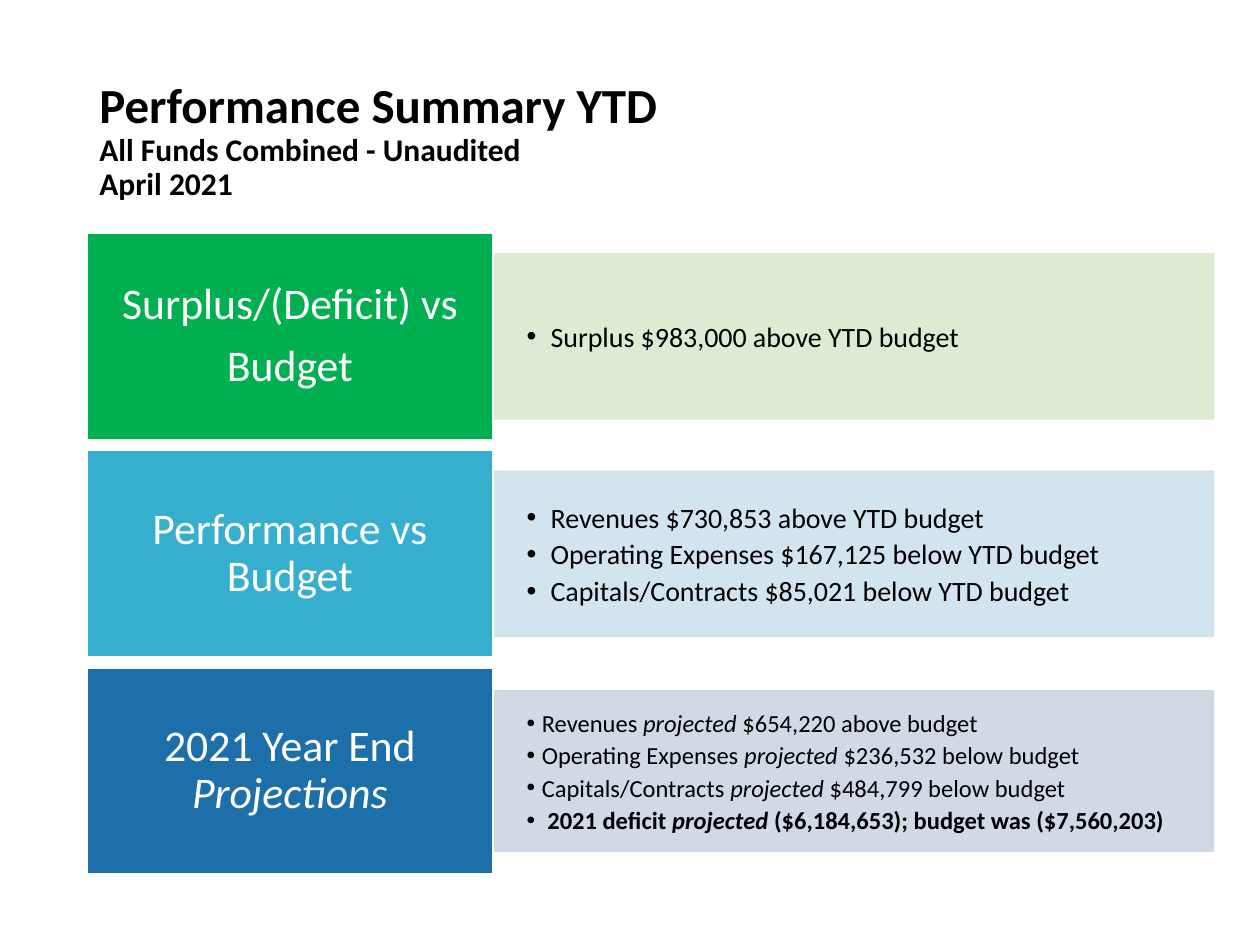
import lxml.etree
import pptx
import pptx.dml.color
import pptx.enum.shapes
import pptx.enum.text
import pptx.oxml.ns
import pptx.util

Inches = pptx.util.Inches
Pt = pptx.util.Pt
qn = pptx.oxml.ns.qn

FONT = "Calibri"
LABEL_LEFT, LABEL_WIDTH, LABEL_HEIGHT = 0.69, 3.22, 1.64
PANEL_WIDTH = 5.72
FIRST_TOP, ROW_PITCH = 1.85, 1.725


def color(value):
    return pptx.dml.color.RGBColor.from_string(value)


def add_span(para, text, size, shade, style=""):
    span = para.add_run()
    span.text = text
    font = span.font
    font.name, font.size = FONT, Pt(size)
    font.bold, font.italic = "b" in style, "i" in style
    font.color.rgb = color(shade)


def prepare_frame(box, horizontal, vertical):
    frame = box.text_frame
    frame.word_wrap = True
    frame.vertical_anchor = pptx.enum.text.MSO_ANCHOR.MIDDLE
    frame.margin_left = frame.margin_right = Inches(horizontal)
    frame.margin_top = frame.margin_bottom = Inches(vertical)
    return frame


def fill_paragraphs(frame, lines, size, shade, spacing, after):
    for index, line in enumerate(lines):
        para = frame.paragraphs[0] if index == 0 else frame.add_paragraph()
        para.line_spacing, para.space_after = spacing, Pt(after)
        for text, style in line:
            add_span(para, text, size, shade, style)


def add_rectangle(slide, left, top, width, height, fill, line):
    box = slide.shapes.add_shape(
        pptx.enum.shapes.MSO_SHAPE.RECTANGLE,
        Inches(left), Inches(top), Inches(width), Inches(height))
    box.shadow.inherit = False
    box.fill.solid()
    box.fill.fore_color.rgb = color(fill)
    box.line.color.rgb = color(line)
    box.line.width = Pt(1)
    return box


def set_opacity(box, percent):
    for node in box._element.spPr.iter(qn("a:srgbClr")):
        lxml.etree.SubElement(node, qn("a:alpha"), val=str(percent * 1000))


def set_bullet(para, indent):
    para.alignment = pptx.enum.text.PP_ALIGN.LEFT
    properties = para._p.get_or_add_pPr()
    properties.set("marL", str(Inches(indent)))
    properties.set("indent", str(-Inches(indent)))
    lxml.etree.SubElement(properties, qn("a:buFont"), typeface="Arial")
    lxml.etree.SubElement(properties, qn("a:buChar"), char="•")


def add_title(slide, lines):
    box = slide.shapes.add_textbox(Inches(0.69), Inches(0.4), Inches(8.62), Inches(1.45))
    para = prepare_frame(box, 0.1, 0.05).paragraphs[0]
    para.line_spacing = 0.9
    for index, (text, size) in enumerate(lines):
        if index:
            para.add_line_break()
        add_span(para, text, size, "000000", "b")


def add_panel(slide, middle, height, fill, lines, size, indent):
    box = add_rectangle(slide, LABEL_LEFT + LABEL_WIDTH, middle - height / 2,
                        PANEL_WIDTH, height, fill, fill)
    set_opacity(box, 90)
    frame = prepare_frame(box, 0.27, 0.14)
    fill_paragraphs(frame, lines, size, "000000", 1.0, size * 0.12)
    for para in frame.paragraphs:
        set_bullet(para, indent)


def add_label(slide, top, fill, lines):
    box = add_rectangle(slide, LABEL_LEFT, top, LABEL_WIDTH, LABEL_HEIGHT, fill, "FFFFFF")
    frame = prepare_frame(box, 0.1, 0.05)
    fill_paragraphs(frame, lines, 25, "FFFFFF", 0.9, 8.75)
    for para in frame.paragraphs:
        para.alignment = pptx.enum.text.PP_ALIGN.CENTER


def plain(*texts):
    return [[(text, "")] for text in texts]


def projection(subject, result):
    return [(subject + " ", ""), ("projected ", "i"), (result, "")]


def main():
    deck = pptx.Presentation()
    deck.slide_width, deck.slide_height = Inches(10), Inches(7.5)
    slide = deck.slides.add_slide(deck.slide_layouts[6])

    add_title(slide, [("Performance Summary YTD", 28),
                      ("All Funds Combined - Unaudited", 18),
                      ("April 2021", 18)])

    projections = [
        projection("Revenues", "$654,220 above budget"),
        projection("Operating Expenses", "$236,532 below budget"),
        projection("Capitals/Contracts", "$484,799 below budget"),
        [(" 2021 deficit ", "b"), ("projected", "bi"),
         (" ($6,184,653); budget was ($7,560,203)", "b")],
    ]
    rows = [
        ("00B050", plain("Surplus/(Deficit) vs", "Budget"),
         "DAE9CF", plain("Surplus $983,000 above YTD budget"), 1.31, 16, 0.19),
        ("36AFCE", plain("Performance vs Budget"),
         "CEE3ED", plain("Revenues $730,853 above YTD budget",
                         "Operating Expenses $167,125 below YTD budget",
                         "Capitals/Contracts $85,021 below YTD budget"), 1.31, 16, 0.19),
        ("1D6FA9", [[("2021 Year End ", ""), ("Projections", "i")]],
         "CDD5E2", projections, 1.27, 14, 0.12),
    ]
    for index, (label_fill, label, panel_fill, lines, height, size, indent) in enumerate(rows):
        top = FIRST_TOP + index * ROW_PITCH
        add_panel(slide, top + LABEL_HEIGHT / 2, height, panel_fill, lines, size, indent)
        add_label(slide, top, label_fill, label)

    deck.save("out.pptx")


if __name__ == "__main__":
    main()
